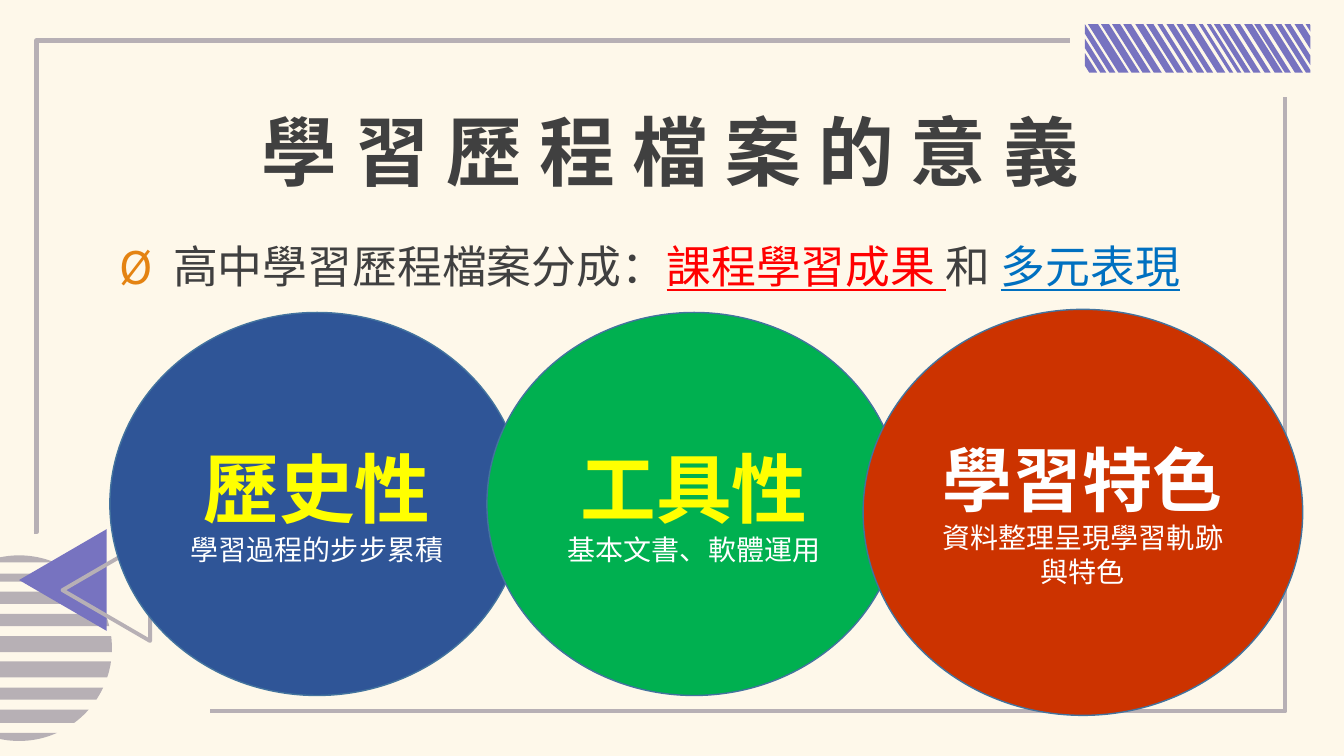
from math import cos, sin, asin

from pptx import Presentation
from pptx.dml.color import RGBColor
from pptx.enum.shapes import MSO_SHAPE
from pptx.enum.text import MSO_ANCHOR, MSO_AUTO_SIZE, PP_ALIGN
from pptx.oxml.xmlchemy import OxmlElement
from pptx.util import Pt

FONT = "Noto Sans CJK SC"
GREY, PURPLE, DARK, YELLOW, WHITE = "B7B0B5", "7773C0", "404040", "FFFF00", "FFFFFF"

# Hatched block: left, right, top, height, slant, and (start, width) of each stripe
HATCH_LEFT, HATCH_RIGHT, HATCH_TOP, HATCH_HEIGHT, HATCH_SLANT = 775, 936, 17.3, 34.6, 21.8
HATCH_STRIPES = [
    (-18.7, 5.7), (-10.8, 4.3), (-4.3, 4.3), (2.2, 7.2), (11.5, 5.8),
    (19.4, 5.8), (27.4, 5.7), (36, 5.8), (43.9, 5.1), (51.8, 3.6),
    (58.3, 5.1), (65.5, 4.3), (72.7, 5.8), (81.4, 2.8), (87.1, 2.9),
    (92.2, 4.3), (98.6, 5.1), (106.6, 4.3), (113.8, 5.7), (121, 4.3),
    (128.2, 5.7), (136.1, 4.3), (142.6, 4.3), (149.8, 5.7), (157.7, 2.9),
]
# Striped disc: centre, radius, and (top, bottom) of each band from the centre
DISC_X, DISC_Y, DISC_RADIUS = 13.7, 463, 66.3
DISC_BANDS = [
    (-66.3, -61.2), (-53.3, -47.5), (-40.3, -31.7), (-24.5, -15.8), (-8.6, 2.9),
    (9.4, 20.9), (28.1, 36.7), (43.9, 53.3), (60.5, 66.3),
]


def color(hex_string):
    return RGBColor.from_string(hex_string)


def style_shape(shape, fill=None, line=None, width=1):
    shape.shadow.inherit = False
    if fill:
        shape.fill.solid()
        shape.fill.fore_color.rgb = color(fill)
    else:
        shape.fill.background()
    if line:
        shape.line.color.rgb = color(line)
        shape.line.width = Pt(width)
    else:
        shape.line.fill.background()


def style_paragraph(paragraph, size, hex_string, bold=False):
    font = paragraph.font
    font.name, font.size, font.bold = FONT, Pt(size), bold
    font.color.rgb = color(hex_string)
    east_asian = OxmlElement("a:ea")
    east_asian.set("typeface", FONT)
    paragraph._p.pPr.find("{*}defRPr").append(east_asian)


def add_outline(slide, contours, closed=True, **style):
    """Draw one freeform from lists of points."""
    builder = None
    for contour in contours:
        points = [(Pt(x), Pt(y)) for x, y in contour]
        if builder is None:
            builder = slide.shapes.build_freeform(*points[0])
        else:
            builder.move_to(*points[0])
        builder.add_line_segments(points[1:], close=closed)
    style_shape(builder.convert_to_shape(), **style)


def clip(points, limit, side):
    """Keep the part of a polygon right (side 1) or left (side -1) of a limit."""
    kept = []
    for (x1, y1), (x2, y2) in zip(points, points[1:] + points[:1]):
        inside = (x1 - limit) * side >= 0
        if inside:
            kept.append((x1, y1))
        if inside != ((x2 - limit) * side >= 0):
            kept.append((limit, y1 + (y2 - y1) * (limit - x1) / (x2 - x1)))
    return kept


def hatch_stripe(start, width):
    left, bottom = HATCH_LEFT + start, HATCH_TOP + HATCH_HEIGHT
    points = [(left, HATCH_TOP), (left + width, HATCH_TOP),
              (left + width + HATCH_SLANT, bottom), (left + HATCH_SLANT, bottom)]
    return clip(clip(points, HATCH_LEFT, 1), HATCH_RIGHT, -1)


def disc_band(top, bottom, steps=10):
    first, last = asin(top / DISC_RADIUS), asin(bottom / DISC_RADIUS)
    angles = [first + (last - first) * step / steps for step in range(steps + 1)]
    arc = [(DISC_RADIUS * cos(angle), DISC_RADIUS * sin(angle)) for angle in angles]
    outline = arc + [(-x, y) for x, y in reversed(arc)]
    return [(DISC_X + x, DISC_Y + y) for x, y in outline]


def add_triangle(slide, left, top, **style):
    triangle = slide.shapes.add_shape(
        MSO_SHAPE.ISOSCELES_TRIANGLE, Pt(left), Pt(top), Pt(72.7), Pt(62.6))
    triangle.rotation = 270
    style_shape(triangle, **style)


def add_decoration(slide):
    # Frame in two corners
    add_outline(slide, [[(24, 380), (26, 380), (26, 29), (764, 29)]],
                closed=False, line=GREY, width=3.25)
    add_outline(slide, [[(150, 508), (918, 508), (918, 69)]],
                closed=False, line=GREY, width=3.25)
    # Hatched block, striped disc and triangles
    add_outline(slide, [hatch_stripe(*stripe) for stripe in HATCH_STRIPES], fill=PURPLE)
    add_outline(slide, [disc_band(*band) for band in DISC_BANDS], fill=GREY)
    add_triangle(slide, 8.6, 383, fill=PURPLE)
    add_triangle(slide, 39.6, 390.2, line=GREY, width=2.75)


def place_text(placeholder, left, top, width, height):
    placeholder.left, placeholder.top = Pt(left), Pt(top)
    placeholder.width, placeholder.height = Pt(width), Pt(height)
    frame = placeholder.text_frame
    frame.auto_size = MSO_AUTO_SIZE.NONE
    frame.word_wrap = True
    frame.vertical_anchor = MSO_ANCHOR.TOP
    frame.margin_left = frame.margin_right = Pt(7.2)
    frame.margin_top = frame.margin_bottom = Pt(7.2)
    return frame.paragraphs[0]


def add_bullet(paragraph, character, hex_string, indent):
    properties = paragraph._p.get_or_add_pPr()
    properties.set("marL", str(Pt(indent)))
    properties.set("indent", str(-Pt(indent)))
    bullet_color = OxmlElement("a:buClr")
    rgb = OxmlElement("a:srgbClr")
    rgb.set("val", hex_string)
    bullet_color.append(rgb)
    bullet_font = OxmlElement("a:buFont")
    bullet_font.set("typeface", FONT)
    bullet = OxmlElement("a:buChar")
    bullet.set("char", character)
    for element in (bullet_color, bullet_font, bullet):
        properties.find("{*}defRPr").addprevious(element)


def fill_title(slide):
    paragraph = place_text(slide.shapes.title, 78.5, 74.9, 800.6, 77)
    paragraph.text = "學 習 歷 程 檔 案 的 意 義"
    paragraph.alignment = PP_ALIGN.CENTER
    paragraph.line_spacing = 0.9
    style_paragraph(paragraph, 54, DARK, bold=True)


def fill_body(slide):
    paragraph = place_text(slide.placeholders[1], 78.5, 144, 852.5, 355)
    paragraph.line_spacing = 1.5
    paragraph.space_before = Pt(12)
    style_paragraph(paragraph, 32, DARK)
    add_bullet(paragraph, "Ø", "E48312", 38)
    for text, accent in (("高中學習歷程檔案分成：", None), ("課程學習成果 ", "FF0000"),
                         ("和 ", None), ("多元表現", "0070C0")):
        run = paragraph.add_run()
        run.text = text
        if accent:
            run.font.color.rgb = color(accent)
            run.font.underline = True


def add_circle(slide, box, fill, heading, heading_size, heading_color, detail):
    circle = slide.shapes.add_shape(MSO_SHAPE.OVAL, *[Pt(length) for length in box])
    style_shape(circle, fill=fill, line="43739E")
    frame = circle.text_frame
    frame.word_wrap = True
    frame.vertical_anchor = MSO_ANCHOR.MIDDLE
    frame.text = f"{heading}\n{detail}"
    for paragraph in frame.paragraphs:
        paragraph.alignment = PP_ALIGN.CENTER
    style_paragraph(frame.paragraphs[0], heading_size, heading_color, bold=True)
    style_paragraph(frame.paragraphs[1], 20, WHITE)


def main():
    presentation = Presentation()
    presentation.slide_width, presentation.slide_height = Pt(960), Pt(540)
    slide = presentation.slides.add_slide(presentation.slide_layouts[1])
    slide.background.fill.solid()
    slide.background.fill.fore_color.rgb = color("FEF8EA")

    fill_title(slide)
    fill_body(slide)
    add_decoration(slide)

    # Three overlapping circles
    add_circle(slide, (78.5, 223.2, 296, 273.6), "2F5597",
               "歷史性", 54, YELLOW, "學習過程的步步累積")
    add_circle(slide, (347.8, 223.2, 296, 273.6), "00B050",
               "工具性", 54, YELLOW, "基本文書、軟體運用")
    add_circle(slide, (616.5, 221, 314, 290), "CC3300",
               "學習特色", 50, WHITE, "資料整理呈現學習軌跡與特色")

    presentation.save("out.pptx")


if __name__ == "__main__":
    main()
